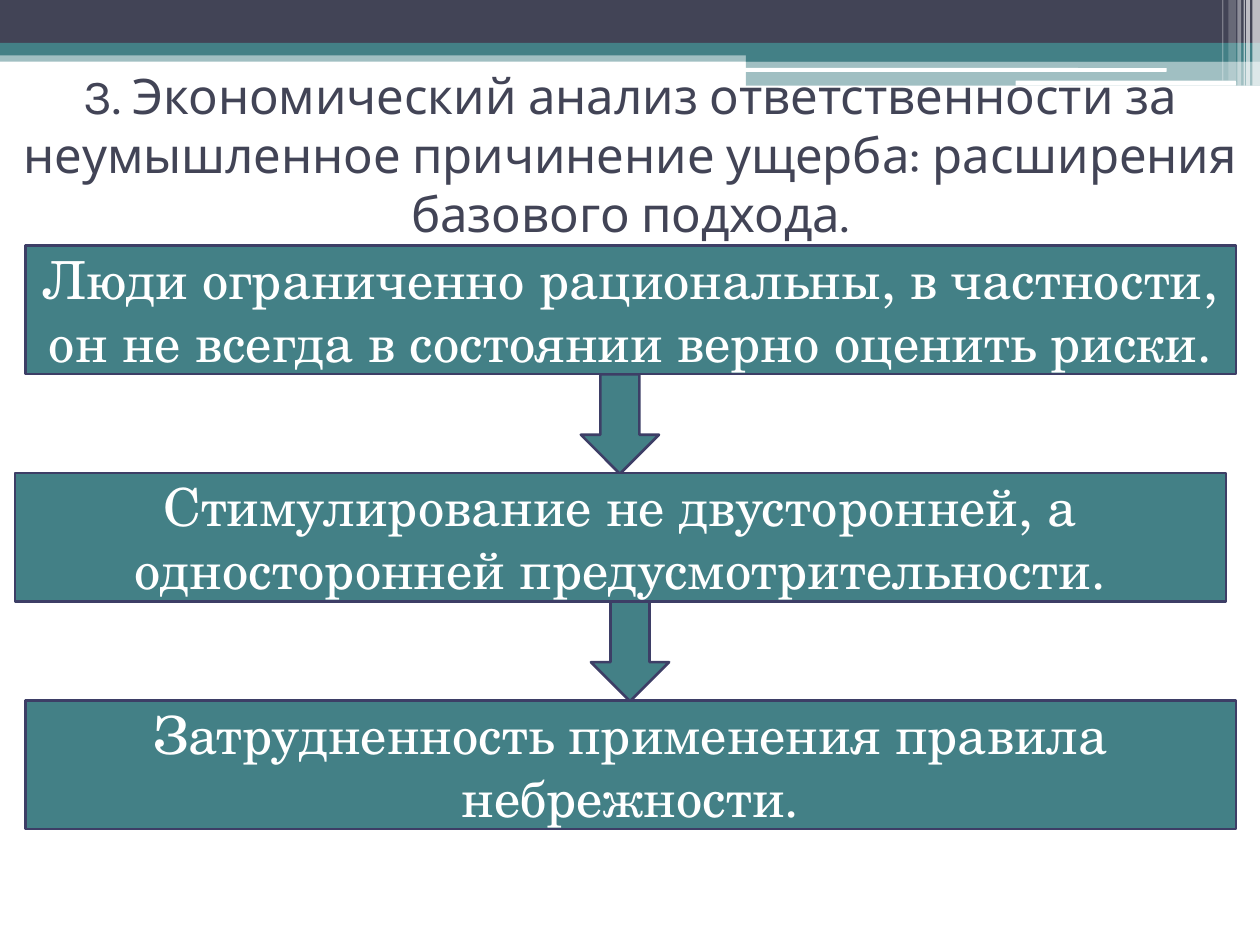
"""Build a slide with a chain of three statements under a layered header band."""
from lxml.etree import SubElement
from pptx import Presentation
from pptx.dml.color import RGBColor
from pptx.enum.shapes import MSO_SHAPE
from pptx.enum.text import MSO_ANCHOR, MSO_AUTO_SIZE, PP_ALIGN
from pptx.oxml.ns import qn
from pptx.util import Inches, Pt

TEAL = RGBColor(0x43, 0x80, 0x86)
SLATE = RGBColor(0x42, 0x44, 0x56)
INDIGO = RGBColor(0x3D, 0x3E, 0x66)
WHITE = RGBColor(0xFF, 0xFF, 0xFF)

TITLE = ("3. Экономический анализ ответственности за неумышленное "
         "причинение ущерба: расширения базового подхода.")
STATEMENTS = [
    (0.2, "Люди ограниченно рациональны, в частности, "
          "он не всегда в состоянии верно оценить риски."),
    (0.12, "Стимулирование не двусторонней, а односторонней предусмотрительности."),
    (0.2, "Затрудненность применения правила небрежности."),
]
ARROW_LEFTS = [4.61, 4.69]
BANDS = [
    (0, 0.4, 10, 0.09, TEAL, 50),
    (0, 0, 10, 0.34, SLATE, 100),
    (0, 0.34, 10, 0.1, TEAL, 100),
    (5.92, 0.39, 4.08, 0.1, TEAL, 100),
    (5.92, 0.48, 4.08, 0.2, TEAL, 50),
]
HIGHLIGHTS = [(5.91, 0.54, 3.35, 0.03), (8.06, 0.64, 1.75, 0.04)]
STRIPES = [
    (9.94, 0.06, 0.68, 65),
    (9.89, 0.03, 0.68, 65),
    (9.87, 0.01, 0.68, 60),
    (9.82, 0.03, 0.68, 40),
    (9.75, 0.06, 0.64, 20),
    (9.7, 0.01, 0.64, 30),
]
BOX_TOP, BOX_W, BOX_H = 1.95, 9.61, 1.02
ARROW_W, ARROW_H = 0.62, 0.79
STEP = 1.805


def add_shape(s, kind, box, fill, opacity=100, outlined=False):
    sp = s.shapes.add_shape(kind, *map(Inches, box))
    sp.shadow.inherit = False
    sp.fill.solid()
    sp.fill.fore_color.rgb = fill
    if opacity < 100:
        color = sp.element.spPr.find(qn("a:solidFill"))[0]
        SubElement(color, qn("a:alpha"), val=str(opacity * 1000))
    if outlined:
        sp.line.color.rgb = INDIGO
        sp.line.width = Pt(1.5)
    else:
        sp.line.fill.background()
    return sp


def write(sp, text, anchor, size, name, color):
    tf = sp.text_frame
    frame = {"word_wrap": True, "auto_size": MSO_AUTO_SIZE.NONE,
             "vertical_anchor": anchor}
    for key, value in frame.items():
        setattr(tf, key, value)
    p = tf.paragraphs[0]
    p.alignment = PP_ALIGN.CENTER
    r = p.add_run()
    r.text = text
    for key, value in {"size": Pt(size), "name": name}.items():
        setattr(r.font, key, value)
    r.font.color.rgb = color


def add_header(s):
    for *box, fill, opacity in BANDS:
        add_shape(s, MSO_SHAPE.RECTANGLE, box, fill, opacity)
    for box in HIGHLIGHTS:
        add_shape(s, MSO_SHAPE.ROUNDED_RECTANGLE, box, WHITE)
    for left, width, height, opacity in STRIPES:
        add_shape(s, MSO_SHAPE.RECTANGLE, (left, 0, width, height), WHITE, opacity)


def add_title(s):
    title = s.shapes.title
    place = {"left": 0, "top": 0.47, "width": 10, "height": 1.39}
    for key, value in place.items():
        setattr(title, key, Inches(value))
    write(title, TITLE, MSO_ANCHOR.TOP, 28, "Karla", SLATE)
    title.element.getparent().append(title.element)


def add_chain(s):
    for i, left in enumerate(ARROW_LEFTS):
        box = (left, BOX_TOP + i * STEP + BOX_H, ARROW_W, ARROW_H)
        add_shape(s, MSO_SHAPE.DOWN_ARROW, box, TEAL, outlined=True)
    for i, (left, text) in enumerate(STATEMENTS):
        box = (left, BOX_TOP + i * STEP, BOX_W, BOX_H)
        sp = add_shape(s, MSO_SHAPE.RECTANGLE, box, TEAL, outlined=True)
        write(sp, text, MSO_ANCHOR.MIDDLE, 30, "TeX Gyre Schola", WHITE)


def main():
    prs = Presentation()
    prs.slide_width, prs.slide_height = Inches(10), Inches(7.5)
    s = prs.slides.add_slide(prs.slide_layouts[5])
    add_header(s)
    add_title(s)
    add_chain(s)
    prs.save("out.pptx")


if __name__ == "__main__":
    main()
